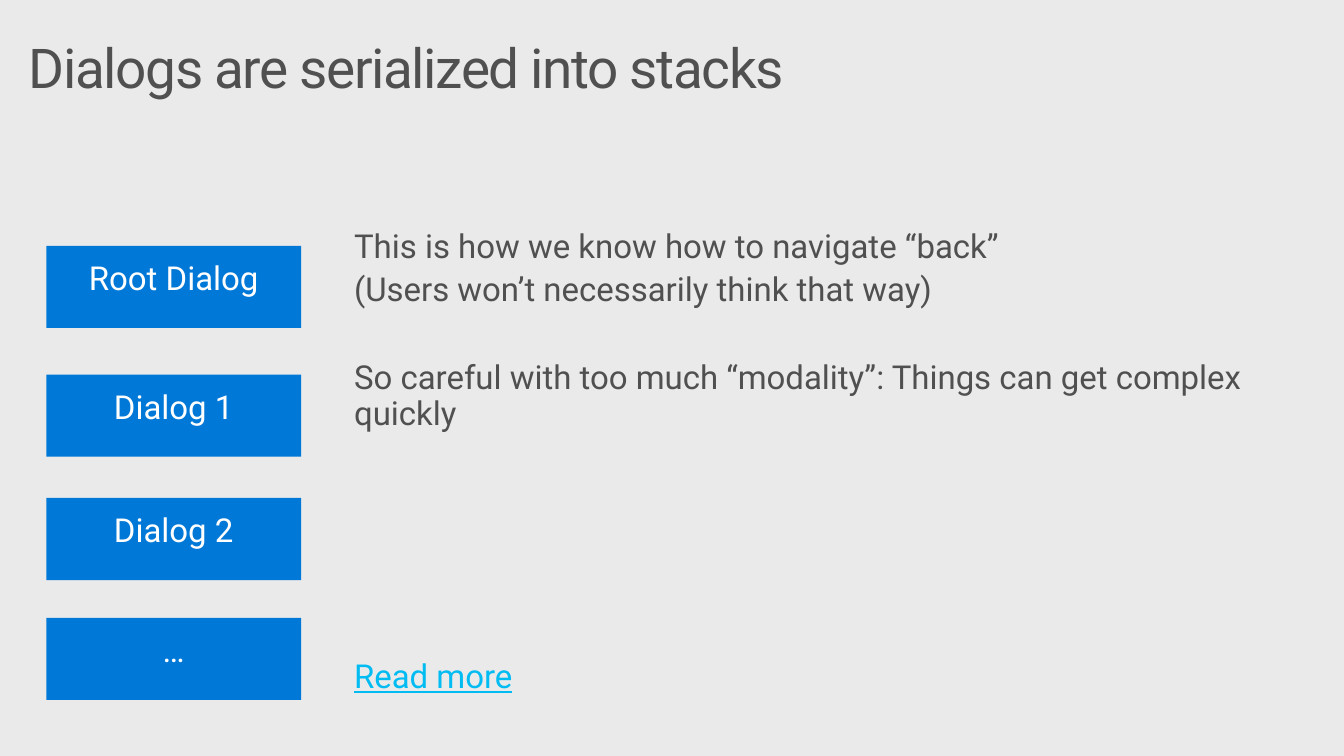
import pptx
import pptx.util
import pptx.dml.color
import pptx.enum.shapes
import pptx.enum.text

Cm, Pt = pptx.util.Cm, pptx.util.Pt
ALIGN = pptx.enum.text.PP_ALIGN
HUES = {"back": "EAEAEA", "text": "505050", "box": "0078D7",
        "white": "FFFFFF", "link": "00BCF2"}


def hue(name):
    return pptx.dml.color.RGBColor.from_string(HUES[name])


def write(frame, lines, inset, align=ALIGN.LEFT):
    """Fill a frame from (text, size, colour, underline, space after) lines."""
    side, top = inset
    form = {"word_wrap": True, "vertical_anchor": pptx.enum.text.MSO_ANCHOR.TOP,
            "margin_left": side, "margin_right": side,
            "margin_top": top, "margin_bottom": top}
    for key, value in form.items():
        setattr(frame, key, value)
    for i, (text, size, color, under, after) in enumerate(lines):
        para = frame.add_paragraph() if i else frame.paragraphs[0]
        form = {"alignment": align, "line_spacing": 0.9,
                "space_before": Pt(0), "space_after": Pt(after)}
        for key, value in form.items():
            setattr(para, key, value)
        run = para.add_run()
        run.text = text
        form = {"name": "Roboto", "size": Pt(size), "underline": under}
        for key, value in form.items():
            setattr(run.font, key, value)
        run.font.color.rgb = hue(color)


deck = pptx.Presentation()
deck.slide_width, deck.slide_height = Cm(34.54), Cm(19.43)
slide = deck.slides.add_slide(deck.slide_layouts[6])
slide.background.fill.solid()
slide.background.fill.fore_color.rgb = hue("back")
shapes = slide.shapes
inset = Cm(0.51), Cm(0.41)

title = shapes.add_textbox(Cm(0.33), Cm(0.81), Cm(33.02), Cm(2.54)).text_frame
write(title, [("Dialogs are serialized into stacks", 40, "text", False, 0)],
      (Cm(0.41), Cm(0.25)))
# Tighten the letters by one point
title.paragraphs[0].runs[0].font._element.set("spc", "-100")

notes = [
    ("This is how we know how to navigate “back”", 24, "text", False, 6),
    ("(Users won’t necessarily think that way)", 24, "text", False, 38),
    ("So careful with too much “modality”: Things can get complex quickly",
     24, "text", False, 166),
    ("Read more", 24, "link", True, 6),
]
body = shapes.add_textbox(Cm(8.59), Cm(5.49), Cm(25.2), Cm(12.9))
write(body.text_frame, notes, inset)

stack = {"Root Dialog": 6.32, "Dialog 1": 9.63, "Dialog 2": 12.8, "…": 15.88}
for label, top in stack.items():
    box = shapes.add_shape(pptx.enum.shapes.MSO_SHAPE.RECTANGLE,
                           Cm(1.19), Cm(top), Cm(6.55), Cm(2.11))
    box.shadow.inherit = False
    box.fill.solid()
    box.fill.fore_color.rgb = hue("box")
    box.line.fill.background()
    write(box.text_frame, [(label, 24, "white", False, 0)], inset, ALIGN.CENTER)

deck.save("out.pptx")
